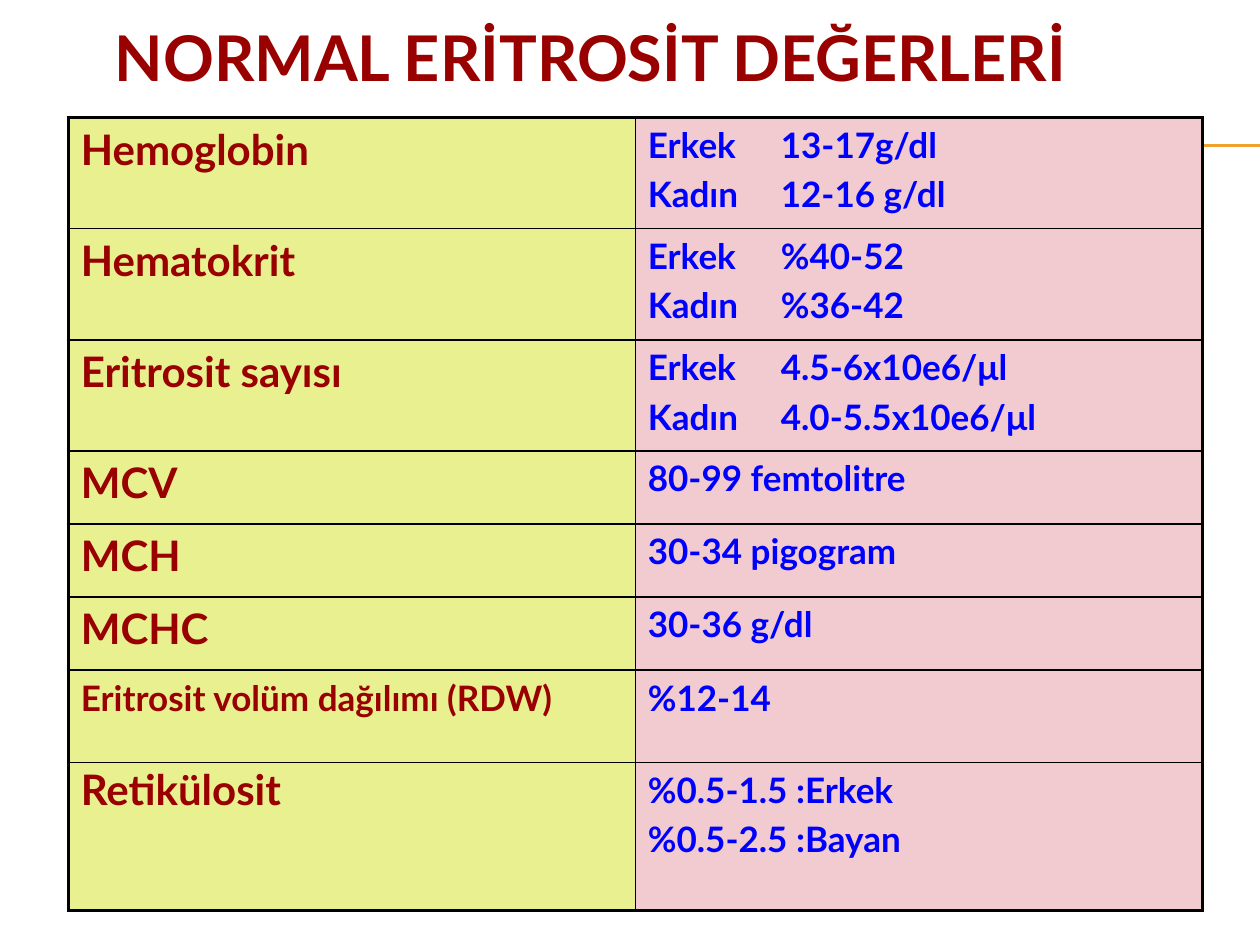
from lxml.etree import SubElement
from pptx import Presentation
from pptx.dml.color import RGBColor
from pptx.enum.shapes import MSO_CONNECTOR
from pptx.enum.text import MSO_ANCHOR, PP_ALIGN
from pptx.oxml.ns import qn
from pptx.util import Pt

TITLE = "NORMAL ERİTROSİT DEĞERLERİ"
ROWS = [
    ("Hemoglobin", ["Erkek\t13-17g/dl", "Kadın\t12-16 g/dl"], 63.5),
    ("Hematokrit", ["Erkek\t%40-52", "Kadın\t%36-42"], 63.5),
    ("Eritrosit sayısı", ["Erkek\t4.5-6x10e6/μl", "Kadın\t4.0-5.5x10e6/μl"], 63.5),
    ("MCV", ["80-99 femtolitre"], 41.75),
    ("MCH", ["30-34 pigogram"], 41.75),
    ("MCHC", ["30-36 g/dl"], 41.75),
    ("Eritrosit volüm dağılımı (RDW)", ["%12-14"], 53),
    ("Retikülosit", ["%0.5-1.5 :Erkek", "%0.5-2.5 :Bayan"], 84.3),
]
SMALL_LABEL = "Eritrosit volüm dağılımı (RDW)"
TIGHT_LABEL = "Retikülosit"

THEME = {
    "font": "Lato",
    "red": "990000", "blue": "0000FF", "rule": "F0A22E", "border": "000000",
    "label_fill": "E9F090", "value_fill": "F1CBCF",
    "title": 36, "label": 24, "value": 20,
    "outer": 2.25, "inner": 1, "rule_width": 0.75,
}
WIDTH, HEIGHT = 720, 540
TITLE_BOX = (58.3, 12.2, 624.2, 39.6)
TABLE_LEFT, TABLE_TOP, COL_WIDTH = 39, 67.2, 324
RULE_LEFT, RULE_YS = 40.3, (82.8, 83.5)
VALUE_TAB = 76


def rgb(name):
    return RGBColor.from_string(THEME[name])


def write(p, text, size, color):
    r = p.add_run()
    r.text = text
    fmt = {"name": THEME["font"], "size": Pt(size), "bold": True}
    for key, value in fmt.items():
        setattr(r.font, key, value)
    r.font.color.rgb = rgb(color)


def add_title(slide):
    sp = slide.shapes.title
    for key, value in zip(("left", "top", "width", "height"), TITLE_BOX):
        setattr(sp, key, Pt(value))
    tf = sp.text_frame
    fmt = {"vertical_anchor": MSO_ANCHOR.MIDDLE, "word_wrap": True}
    for key, value in fmt.items():
        setattr(tf, key, value)
    p = tf.paragraphs[0]
    p.alignment = PP_ALIGN.LEFT
    write(p, TITLE, THEME["title"], "red")


def add_rule(slide, y):
    line = slide.shapes.add_connector(
        MSO_CONNECTOR.STRAIGHT, Pt(RULE_LEFT), Pt(y), Pt(WIDTH), Pt(y))
    line.line.color.rgb = rgb("rule")
    line.line.width = Pt(THEME["rule_width"])
    SubElement(line._element.spPr, qn("a:effectLst"))


def set_borders(cell, outer):
    tc_pr = cell._tc.get_or_add_tcPr()
    for side in "LRTB":
        width = THEME["outer" if side in outer else "inner"]
        ln = SubElement(tc_pr, qn("a:ln" + side), w=str(Pt(width)))
        fill = SubElement(ln, qn("a:solidFill"))
        SubElement(fill, qn("a:srgbClr"), val=THEME["border"])


def fill_cell(cell, lines, size, color, fill, outer):
    set_borders(cell, outer)
    cell.fill.solid()
    cell.fill.fore_color.rgb = rgb(fill)
    tf = cell.text_frame
    for i, text in enumerate(lines):
        p = tf.add_paragraph() if i else tf.paragraphs[0]
        p.space_before = Pt(size * 0.2)
        if text == TIGHT_LABEL:
            p.line_spacing = 0.9
        if "\t" in text:
            tabs = SubElement(p._p.get_or_add_pPr(), qn("a:tabLst"))
            SubElement(tabs, qn("a:tab"), pos=str(Pt(VALUE_TAB)), algn="l")
        write(p, text, size, color)


def add_values_table(slide):
    total = sum(height for _, _, height in ROWS)
    table = slide.shapes.add_table(
        len(ROWS), 2, Pt(TABLE_LEFT), Pt(TABLE_TOP),
        Pt(2 * COL_WIDTH), Pt(total)).table
    for flag in ("first_row", "horz_banding"):
        setattr(table, flag, False)
    for col in table.columns:
        col.width = Pt(COL_WIDTH)
    for i, (label, values, height) in enumerate(ROWS):
        table.rows[i].height = Pt(height)
        edge = ("T" if i == 0 else "") + ("B" if i == len(ROWS) - 1 else "")
        size = THEME["value" if label == SMALL_LABEL else "label"]
        fill_cell(table.cell(i, 0), [label], size, "red", "label_fill", edge + "L")
        fill_cell(table.cell(i, 1), values, THEME["value"], "blue", "value_fill", edge + "R")


def main():
    prs = Presentation()
    prs.slide_width, prs.slide_height = Pt(WIDTH), Pt(HEIGHT)
    slide = prs.slides.add_slide(prs.slide_layouts[5])
    add_title(slide)
    for y in RULE_YS:
        add_rule(slide, y)
    add_values_table(slide)
    prs.save("out.pptx")


if __name__ == "__main__":
    main()
